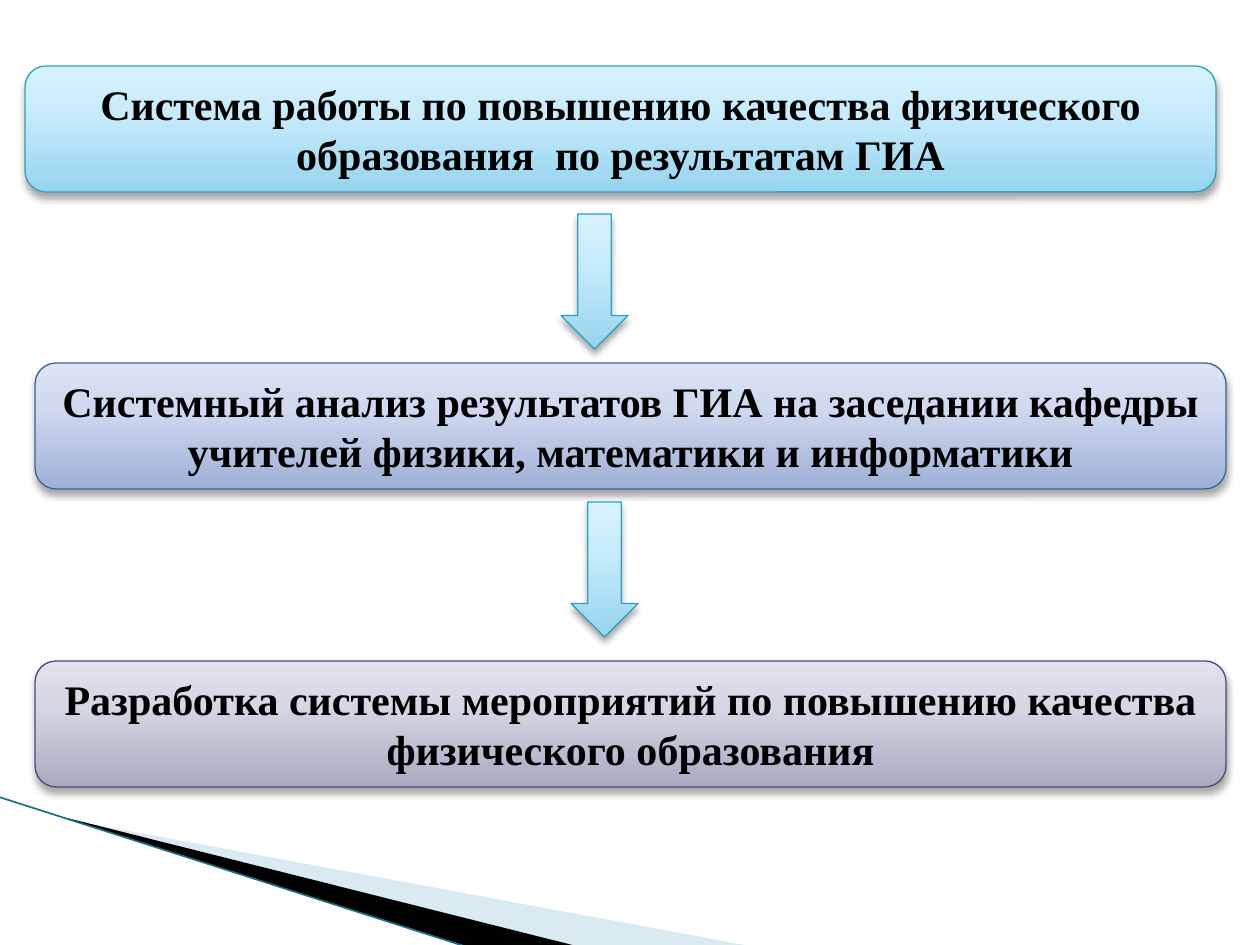
from lxml import etree
from pptx import Presentation
from pptx.dml.color import RGBColor
from pptx.enum import shapes, text
from pptx.oxml import parse_xml
from pptx.oxml.ns import nsdecls, qn
from pptx.util import Pt

SCALE = 914400 / 126  # EMU in one px
FONT = "Times New Roman"
INK = {"black": "000000", "pale": "A0CBDC", "edge": "1B6F83"}
# Gradient from bottom to top, then the outline
TONES = {
    "aqua": ("96D4EE", "C9ECFC", "D7F2FF", "2DA2BF"),
    "blue": ("9FAFD6", "D0D9EF", "DCE3F6", "39639D"),
    "grey": ("A8AAC0", "D6D7E3", "E2E2EC", "474B78"),
}
BOXES = [
    (25, 66, "aqua", "Система работы по повышению качества физического образования  по результатам ГИА"),
    (35, 363, "blue", "Системный анализ результатов ГИА на заседании кафедры учителей физики, математики и информатики"),
    (35, 661, "grey", "Разработка системы мероприятий по повышению качества физического образования"),
]
ARROWS = [(561, 214), (571, 502)]
WEDGES = [
    ("pale", 40, [(69, 820), (750, 946), (575, 946), (69, 819)]),
    ("black", 100, [(67, 818), (576, 946), (469, 947), (68, 819)]),
]


def px(n):
    return round(n * SCALE)


def rgb(name):
    return RGBColor.from_string(INK[name])


def shade(shape, tone):
    """Give a shape its vertical gradient, outline and soft shadow."""
    *fills, edge = TONES[tone]
    stops = "".join(
        f'<a:gs pos="{pos}000"><a:srgbClr val="{val}"/></a:gs>'
        for pos, val in zip((0, 65, 100), fills)
    )
    shape.fill.gradient()
    props = shape._element.spPr
    props.replace(props.find(qn("a:gradFill")), parse_xml(
        f'<a:gradFill {nsdecls("a")} rotWithShape="1"><a:gsLst>{stops}</a:gsLst>'
        '<a:lin ang="16200000" scaled="0"/></a:gradFill>'))
    shape.line.color.rgb = RGBColor.from_string(edge)
    shape.line.width = Pt(0.75)
    shape.shadow.inherit = False
    props.find(qn("a:effectLst")).append(parse_xml(
        f'<a:outerShdw {nsdecls("a")} blurRad="{Pt(4)}" dist="{Pt(3)}" dir="5400000" rotWithShape="0">'
        f'<a:srgbClr val="{INK["black"]}"><a:alpha val="35000"/></a:srgbClr></a:outerShdw>'))


def add_box(slide, left, top, tone, words):
    box = slide.shapes.add_shape(
        shapes.MSO_SHAPE.ROUNDED_RECTANGLE, px(left), px(top), px(1191), px(126))
    shade(box, tone)
    frame = box.text_frame
    frame.word_wrap = True
    frame.vertical_anchor = text.MSO_ANCHOR.MIDDLE
    frame.text = words
    para = frame.paragraphs[0]
    para.alignment = text.PP_ALIGN.CENTER
    font = para.runs[0].font
    font.name, font.size, font.bold = FONT, Pt(24), True
    font.color.rgb = rgb("black")


def add_arrow(slide, left, top):
    arrow = slide.shapes.add_shape(
        shapes.MSO_SHAPE.DOWN_ARROW, px(left), px(top), px(67), px(135))
    shade(arrow, "aqua")


def add_wedge(slide, name, alpha, points):
    pen = slide.shapes.build_freeform(*points[0], scale=SCALE)
    pen.add_line_segments(points[1:], close=True)
    wedge = pen.convert_to_shape()
    wedge.shadow.inherit = False
    wedge.line.fill.background()
    wedge.fill.solid()
    wedge.fill.fore_color.rgb = rgb(name)
    if alpha < 100:
        color = wedge._element.spPr.find(qn("a:solidFill"))[0]
        etree.SubElement(color, qn("a:alpha")).set("val", str(alpha * 1000))


def add_edge(slide):
    edge = slide.shapes.add_connector(
        shapes.MSO_CONNECTOR.STRAIGHT, px(-1), px(797), px(467), px(947))
    edge.line.color.rgb = rgb("edge")
    edge.line.width = Pt(0.95)
    etree.SubElement(edge._element.spPr, qn("a:effectLst"))


def main():
    deck = Presentation()
    deck.slide_width, deck.slide_height = px(1260), px(945)
    slide = deck.slides.add_slide(deck.slide_layouts[6])

    # Corner decoration
    for wedge in WEDGES:
        add_wedge(slide, *wedge)
    add_edge(slide)

    # Steps and the arrows between them
    for box in BOXES:
        add_box(slide, *box)
    for arrow in ARROWS:
        add_arrow(slide, *arrow)

    deck.save("out.pptx")


if __name__ == "__main__":
    main()
